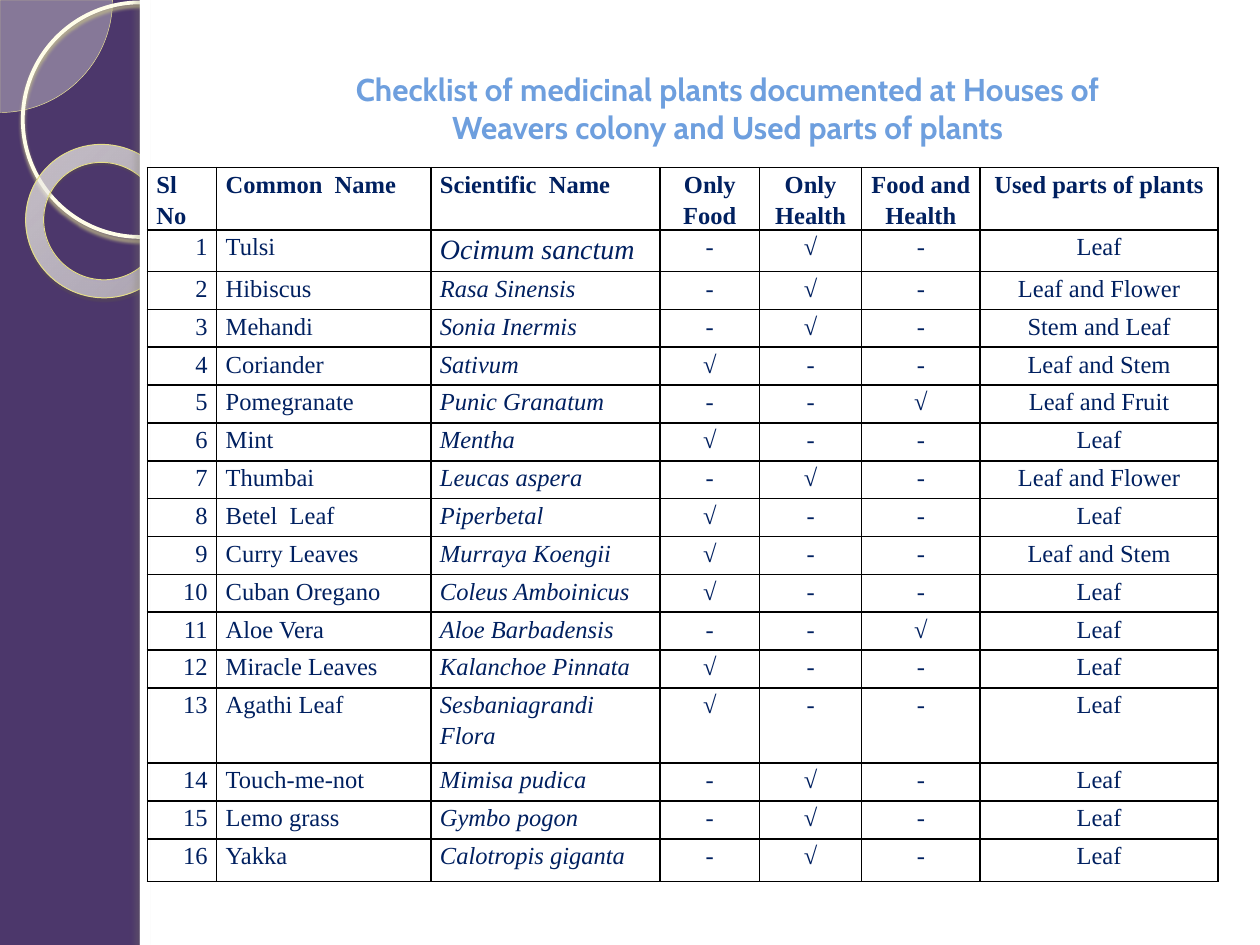
from typing import NamedTuple

from pptx import Presentation
from pptx.dml.color import RGBColor
from pptx.enum.shapes import MSO_SHAPE
from pptx.enum.text import MSO_ANCHOR, MSO_AUTO_SIZE, PP_ALIGN
from pptx.oxml import parse_xml
from pptx.util import Pt

PIE, OVAL, DONUT, RECT = MSO_SHAPE.PIE, MSO_SHAPE.OVAL, MSO_SHAPE.DONUT, MSO_SHAPE.RECTANGLE
LEFT, MID, RIGHT = PP_ALIGN.LEFT, PP_ALIGN.CENTER, PP_ALIGN.RIGHT
MIDDLE, FIXED = MSO_ANCHOR.MIDDLE, MSO_AUTO_SIZE.NONE
NS = 'xmlns:a="http://schemas.openxmlformats.org/drawingml/2006/main"'
SERIF, NAVY = "Times New Roman", "002060"
YES, NO = "√", "-"


class Shadow(NamedTuple):
    color: str
    alpha: int
    blur: float
    dist: float
    angle: int


class Stop(NamedTuple):
    place: int
    color: str
    alpha: int


class Deco(NamedTuple):
    kind: int
    box: tuple
    fill: tuple = ()
    line: tuple = ()
    shadow: Shadow | None = None
    adjust: tuple = ()
    turn: float = 0


class Plant(NamedTuple):
    name: str
    latin: str
    use: int
    picked: str


DECOS = [
    Deco(PIE, (-64.3, -64.3, 128.6, 128.6), (Stop(0, "FFFEF6", 33),), ("F0E995", 0.25),
         adjust=(0, 54.02)),
    Deco(OVAL, (13, 1.4, 134, 134), line=("FFFDE8", 2.15),
         shadow=Shadow("C6C18B", 85, 2, 2, 90)),
    Deco(DONUT, (14.4, 82.8, 88.6, 87.1),
         (Stop(0, "FFFEF8", 70), Stop(70, "FFFFFC", 55), Stop(100, "FFF793", 60)),
         ("E5DE88", 0.58), Shadow("676440", 35, 1, 1.2, 75), (0.118,), 38.6),
    Deco(RECT, (80, 0, 640, 540), (Stop(0, "FFFFFF", 100),)),
    Deco(RECT, (80, 0, 5.8, 540), (Stop(0, "FFFFFF", 100),),
         shadow=Shadow("7F7D63", 25, 3, 3, 180)),
]

TITLE = ["Checklist of medicinal plants documented at Houses of",
         "Weavers colony and Used parts of plants"]
HEADS = ["Sl No", "Common  Name", "Scientific  Name", "Only Food", "Only Health",
         "Food and Health", "Used parts of plants"]
ALIGNS = [RIGHT, LEFT, LEFT, MID, MID, MID, MID]
WIDTHS = [39.6, 122.4, 131, 56.9, 58.3, 67.7, 136.1]
FOOD, HEALTH, BOTH = range(3)
PLANTS = [
    Plant("Tulsi", "Ocimum sanctum", HEALTH, "Leaf"),
    Plant("Hibiscus", "Rasa Sinensis", HEALTH, "Leaf and Flower"),
    Plant("Mehandi", "Sonia Inermis", HEALTH, "Stem and Leaf"),
    Plant("Coriander", "Sativum", FOOD, "Leaf and Stem"),
    Plant("Pomegranate", "Punic Granatum", BOTH, "Leaf and Fruit"),
    Plant("Mint", "Mentha", FOOD, "Leaf"),
    Plant("Thumbai", "Leucas aspera", HEALTH, "Leaf and Flower"),
    Plant("Betel  Leaf", "Piperbetal", FOOD, "Leaf"),
    Plant("Curry Leaves", "Murraya Koengii", FOOD, "Leaf and Stem"),
    Plant("Cuban Oregano", "Coleus Amboinicus", FOOD, "Leaf"),
    Plant("Aloe Vera", "Aloe Barbadensis", BOTH, "Leaf"),
    Plant("Miracle Leaves", "Kalanchoe Pinnata", FOOD, "Leaf"),
    Plant("Agathi Leaf", "Sesbaniagrandi Flora", FOOD, "Leaf"),
    Plant("Touch-me-not", "Mimisa pudica", HEALTH, "Leaf"),
    Plant("Lemo grass", "Gymbo pogon", HEALTH, "Leaf"),
    Plant("Yakka", "Calotropis giganta", HEALTH, "Leaf"),
]
HEIGHTS = {0: 31.7, 1: 23.8, 13: 43, 16: 24.5}


def paint(target, color: str) -> None:
    target.solid()
    target.fore_color.rgb = RGBColor.from_string(color)


def tint(color: str, alpha: int) -> str:
    return f'<a:srgbClr val="{color}"><a:alpha val="{alpha * 1000}"/></a:srgbClr>'


def blend(stops: tuple) -> str:
    marks = "".join(f'<a:gs pos="{s.place * 1000}">{tint(s.color, s.alpha)}</a:gs>'
                    for s in stops)
    return (f'<a:gradFill {NS}><a:gsLst>{marks}</a:gsLst><a:path path="circle">'
            '<a:fillToRect l="-408000" t="-50000" r="508000" b="150000"/>'
            '</a:path></a:gradFill>')


def style(font, name: str, size: float, color: str, bold: bool = False,
          italic: bool = False) -> None:
    font.name, font.size, font.bold, font.italic = name, Pt(size), bold, italic
    paint(font.fill, color)


def draw_deco(slide, deco: Deco) -> None:
    shape = slide.shapes.add_shape(deco.kind, *map(Pt, deco.box))
    shape.rotation = deco.turn
    shape.shadow.inherit = False
    for i, value in enumerate(deco.adjust):
        shape.adjustments[i] = value
    props = shape._element.spPr
    if deco.fill:
        paint(shape.fill, deco.fill[0].color)
        solid = props.find("{*}solidFill")
        if len(deco.fill) > 1:
            props.replace(solid, parse_xml(blend(deco.fill)))
        else:
            alpha = deco.fill[0].alpha * 1000
            solid[0].append(parse_xml(f'<a:alpha {NS} val="{alpha}"/>'))
    else:
        shape.fill.background()
    if deco.line:
        paint(shape.line.fill, deco.line[0])
        shape.line.width = Pt(deco.line[1])
    else:
        shape.line.fill.background()
    if deco.shadow:
        cast = deco.shadow
        props.find("{*}effectLst").append(parse_xml(
            f'<a:outerShdw {NS} blurRad="{Pt(cast.blur)}" dist="{Pt(cast.dist)}" '
            f'dir="{cast.angle * 60000}" algn="tl" rotWithShape="0">'
            f'{tint(cast.color, cast.alpha)}</a:outerShdw>'))


def draw_title(slide) -> None:
    title = slide.shapes.title
    slide.shapes._spTree.append(title._element)
    title.left, title.top, title.width, title.height = map(Pt, (90, 36, 651.6, 51))
    frame = title.text_frame
    frame.word_wrap, frame.auto_size, frame.vertical_anchor = True, FIXED, MIDDLE
    frame.text = "\n".join(TITLE)
    for para in frame.paragraphs:
        para.alignment = MID
        style(para.font, "Cabin", 18, "6E9FDE", bold=True)


def draw_cell(cell, text: str, align: int, size: float, bold: bool, italic: bool) -> None:
    cell.margin_left = cell.margin_right = Pt(5.2)
    cell.margin_top = cell.margin_bottom = 0
    cell.text = text
    para = cell.text_frame.paragraphs[0]
    para.alignment, para.line_spacing = align, 1.15
    style(para.font, SERIF, size, NAVY, bold, italic)
    cell.fill.background()
    props = cell._tc.get_or_add_tcPr()
    for i, side in enumerate(("lnL", "lnR", "lnT", "lnB")):
        props.insert(i, parse_xml(
            f'<a:{side} {NS} w="{Pt(1)}"><a:solidFill><a:srgbClr val="000000"/>'
            f'</a:solidFill></a:{side}>'))


def draw_table(slide) -> None:
    rows = [HEADS]
    for i, plant in enumerate(PLANTS, 1):
        marks = [YES if use == plant.use else NO for use in (FOOD, HEALTH, BOTH)]
        rows.append([str(i), plant.name, plant.latin, *marks, plant.picked])
    table = slide.shapes.add_table(len(rows), len(HEADS), Pt(84.2), Pt(95.8),
                                   Pt(612), Pt(411)).table
    table.first_row = table.horz_banding = False
    for col, width in zip(table.columns, WIDTHS):
        col.width = Pt(width)
    for r, row in enumerate(rows):
        table.rows[r].height = Pt(HEIGHTS.get(r, 21.65))
        for c, text in enumerate(row):
            align = LEFT if r == c == 0 else ALIGNS[c]
            size = 16 if (r, c) == (1, 2) else 14
            draw_cell(table.cell(r, c), text, align, size, r == 0, r > 0 and c == 2)


def main() -> None:
    deck = Presentation()
    deck.slide_width, deck.slide_height = Pt(720), Pt(540)
    slide = deck.slides.add_slide(deck.slide_layouts[5])
    paint(slide.background.fill, "4C376B")
    for deco in DECOS:
        draw_deco(slide, deco)
    draw_title(slide)
    draw_table(slide)
    deck.save("out.pptx")


if __name__ == "__main__":
    main()
